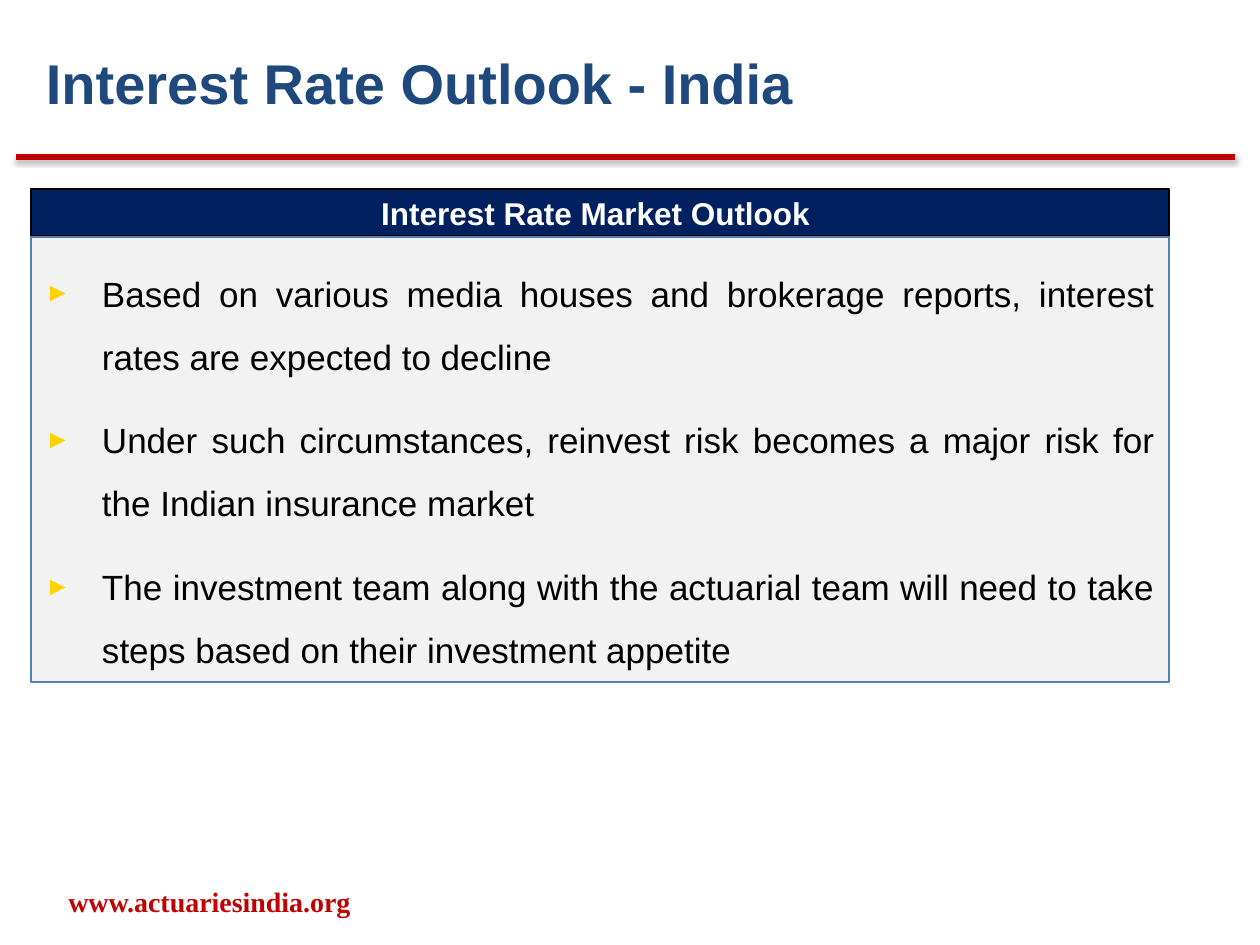
import pptx
import pptx.dml.color
import pptx.enum.shapes
import pptx.enum.text
import pptx.oxml
import pptx.oxml.ns
import pptx.util

RGBColor = pptx.dml.color.RGBColor
ALIGN = pptx.enum.text.PP_ALIGN
ANCHOR = pptx.enum.text.MSO_ANCHOR
RED = RGBColor(0xC0, 0x00, 0x00)
NAVY = RGBColor(0x00, 0x20, 0x60)
TITLE_BLUE = RGBColor(0x1F, 0x49, 0x7D)
BORDER_BLUE = RGBColor(0x4F, 0x81, 0xBD)
PALE_GREY = RGBColor(0xF2, 0xF2, 0xF2)
BULLET_GOLD = RGBColor(0xFF, 0xD2, 0x00)
BLACK = RGBColor(0, 0, 0)
WHITE = RGBColor(255, 255, 255)
EMU_PER_PX = 914400 / 126
NAMESPACE = pptx.oxml.ns.nsdecls("a")


def px(*lengths):
    return [pptx.util.Emu(round(length * EMU_PER_PX)) for length in lengths]


def write(box, *texts, size, color, font="Arial", bold=False, align=ALIGN.LEFT,
          anchor=ANCHOR.TOP, wrap=True, inset=(13, 6), bullet=None,
          line_spacing=None, space_after=None):
    """Fill a shape with one paragraph for each text."""
    frame = box.text_frame
    frame.word_wrap = wrap
    frame.auto_size = pptx.enum.text.MSO_AUTO_SIZE.NONE
    frame.vertical_anchor = anchor
    frame.margin_left, frame.margin_top = px(*inset)
    frame.margin_right, frame.margin_bottom = px(*inset)
    for index, text in enumerate(texts):
        para = frame.paragraphs[0] if index == 0 else frame.add_paragraph()
        if bullet:
            properties = para._p.get_or_add_pPr()
            indent = px(57)[0]
            properties.set("marL", str(indent))
            properties.set("indent", str(-indent))
            for xml in (
                f'<a:buClr {NAMESPACE}><a:srgbClr val="{BULLET_GOLD}"/></a:buClr>',
                f'<a:buSzPct {NAMESPACE} val="75000"/>',
                f'<a:buFont {NAMESPACE} typeface="Arial"/>',
                f'<a:buChar {NAMESPACE} char="{bullet}"/>',
            ):
                properties.append(pptx.oxml.parse_xml(xml))
        para.alignment = align
        para.line_spacing = line_spacing
        if space_after is not None:
            para.space_after = pptx.util.Pt(space_after)
        span = para.add_run()
        span.text = text
        span.font.name = font
        span.font.size = pptx.util.Pt(size)
        span.font.bold = bold
        span.font.color.rgb = color


deck = pptx.Presentation()
deck.slide_width, deck.slide_height = px(1260, 945)
page = deck.slides.add_slide(deck.slide_layouts[5])

# Red rule with a soft shadow beneath it
rule = page.shapes.add_connector(
    pptx.enum.shapes.MSO_CONNECTOR.STRAIGHT, *px(16, 157, 1235, 157))
rule.line.color.rgb = RED
rule.line.width = pptx.util.Pt(3)
rule._element.spPr.append(pptx.oxml.parse_xml(
    f'<a:effectLst {NAMESPACE}>'
    '<a:outerShdw blurRad="40000" dist="20000" dir="5400000" rotWithShape="0">'
    '<a:srgbClr val="000000"><a:alpha val="38000"/></a:srgbClr>'
    '</a:outerShdw></a:effectLst>'))

title = page.shapes.title
title.left, title.top, title.width, title.height = px(33, 42, 1135, 81)
write(title, "Interest Rate Outlook - India", size=32, color=TITLE_BLUE, bold=True)

# Heading bar and the panel below it
panels = []
for top, height, fill, border in ((189, 47, NAVY, BLACK),
                                  (237, 445, PALE_GREY, BORDER_BLUE)):
    panel = page.shapes.add_shape(
        pptx.enum.shapes.MSO_SHAPE.RECTANGLE, *px(31, top, 1138, height))
    panel.shadow.inherit = False
    panel.fill.solid()
    panel.fill.fore_color.rgb = fill
    panel.line.color.rgb = border
    panel.line.width = pptx.util.Pt(0.75)
    panels.append(panel)
heading, body = panels

# The closing space shifts the centred heading slightly left
write(heading, "Interest Rate Market Outlook ", size=18, color=WHITE, bold=True,
      align=ALIGN.CENTER, anchor=ANCHOR.MIDDLE, wrap=False)
write(body,
      "Based on various media houses and brokerage reports, interest rates are "
      "expected to decline",
      "Under such circumstances, reinvest risk becomes a major risk for the Indian "
      "insurance market",
      "The investment team along with the actuarial team will need to take steps "
      "based on their investment appetite",
      size=20, color=BLACK, align=ALIGN.JUSTIFY, inset=(14, 14), bullet="►",
      line_spacing=1.5, space_after=12)

footer = page.shapes.add_textbox(*px(10, 876, 399, 50))
write(footer, "www.actuariesindia.org", size=16, color=RED, font="Times New Roman",
      bold=True, align=ALIGN.CENTER, anchor=ANCHOR.MIDDLE)

deck.save("out.pptx")
